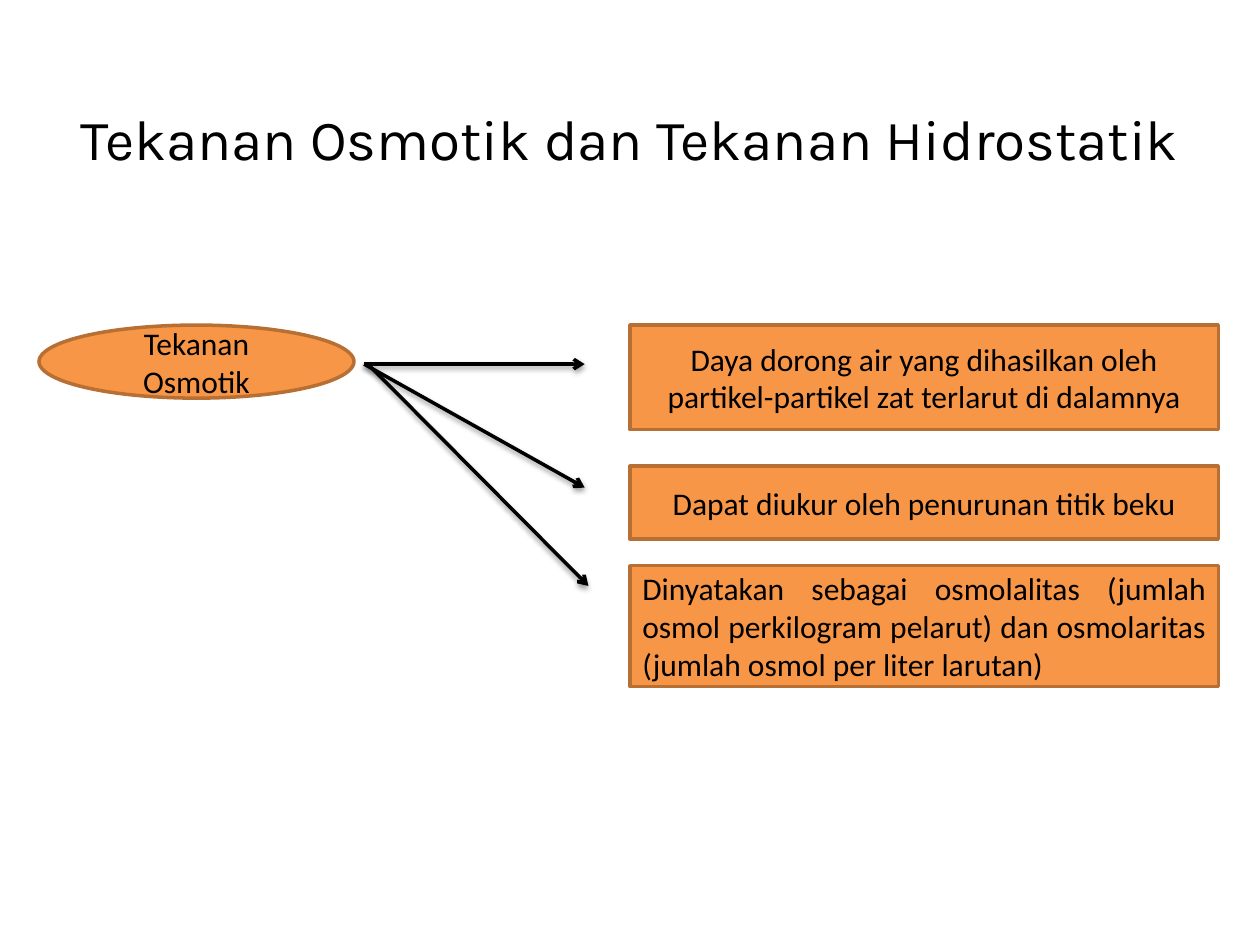
from typing import NamedTuple

from lxml.etree import SubElement
from pptx import Presentation
from pptx.dml.color import RGBColor
from pptx.enum.shapes import MSO_CONNECTOR as Link, MSO_SHAPE as Kind
from pptx.enum.text import MSO_ANCHOR as Anchor, PP_ALIGN as Align
from pptx.oxml import parse_xml
from pptx.oxml.ns import nsdecls, qn
from pptx.util import Inches, Pt

INK, FILL, EDGE = "000000", "F79646", "B76F34"
SHADE = f"""<a:effectLst {nsdecls("a")}>
  <a:outerShdw blurRad="40000" dist="20000" dir="5400000" rotWithShape="0">
    <a:srgbClr val="{INK}"><a:alpha val="38000"/></a:srgbClr>
  </a:outerShdw>
</a:effectLst>"""


class Node(NamedTuple):
    kind: Kind
    left: float
    top: float
    width: float
    height: float
    text: str
    align: Align = Align.CENTER


class Arrow(NamedTuple):
    left: float
    right: float
    end: float


BOX_X, BOX_W, TOP = 5, 4.67, 2.58
START = 2.89
NODES = [
    Node(Kind.OVAL, 0.31, TOP, 2.5, 0.58, "Tekanan Osmotik"),
    Node(Kind.RECTANGLE, BOX_X, TOP, BOX_W, 0.83,
         "Daya dorong air yang dihasilkan oleh partikel-partikel zat terlarut di dalamnya"),
    Node(Kind.RECTANGLE, BOX_X, 3.7, BOX_W, 0.58,
         "Dapat diukur oleh penurunan titik beku"),
    Node(Kind.RECTANGLE, BOX_X, 4.49, BOX_W, 0.96,
         "Dinyatakan sebagai osmolalitas (jumlah osmol perkilogram pelarut) "
         "dan osmolaritas (jumlah osmol per liter larutan)", Align.JUSTIFY),
]
ARROWS = [Arrow(2.89, 4.64, START), Arrow(2.89, 4.64, 3.87), Arrow(2.92, 4.67, 4.65)]


def color(code: str) -> RGBColor:
    return RGBColor.from_string(code)


def write(shape, text: str, align: Align, face: str, size: float) -> None:
    frame = shape.text_frame
    frame.word_wrap = True
    frame.vertical_anchor = Anchor.MIDDLE
    para = frame.paragraphs[0]
    para.text = text
    para.alignment = align
    for name, value in {"name": face, "size": Pt(size)}.items():
        setattr(para.font, name, value)
    para.font.color.rgb = color(INK)


def stroke(line, code: str) -> None:
    line.color.rgb = color(code)
    line.width = Pt(2)


def add_title(slide, text: str) -> None:
    box = slide.shapes.add_textbox(Inches(0.5), Inches(0.47), Inches(9), Inches(1.25))
    write(box, text, Align.CENTER, "Karla", 32.4)


def add_node(slide, node: Node) -> None:
    shape = slide.shapes.add_shape(node.kind, Inches(node.left), Inches(node.top),
                                   Inches(node.width), Inches(node.height))
    shape.shadow.inherit = False
    shape.fill.solid()
    shape.fill.fore_color.rgb = color(FILL)
    stroke(shape.line, EDGE)
    write(shape, node.text, node.align, "Calibri", 18)


def add_arrow(slide, arrow: Arrow) -> None:
    link = slide.shapes.add_connector(Link.STRAIGHT, Inches(arrow.left), Inches(START),
                                      Inches(arrow.right), Inches(arrow.end))
    stroke(link.line, INK)
    props = link.element.spPr
    SubElement(props.find(qn("a:ln")), qn("a:tailEnd"), type="arrow")
    props.append(parse_xml(SHADE))


def main() -> None:
    deck = Presentation()
    deck.slide_width, deck.slide_height = Inches(10), Inches(7.5)
    slide = deck.slides.add_slide(deck.slide_layouts[6])
    add_title(slide, "Tekanan Osmotik dan Tekanan Hidrostatik")
    cause, *facts = NODES
    add_node(slide, cause)
    for arrow in ARROWS:
        add_arrow(slide, arrow)
    for fact in facts:
        add_node(slide, fact)
    deck.save("out.pptx")


if __name__ == "__main__":
    main()
